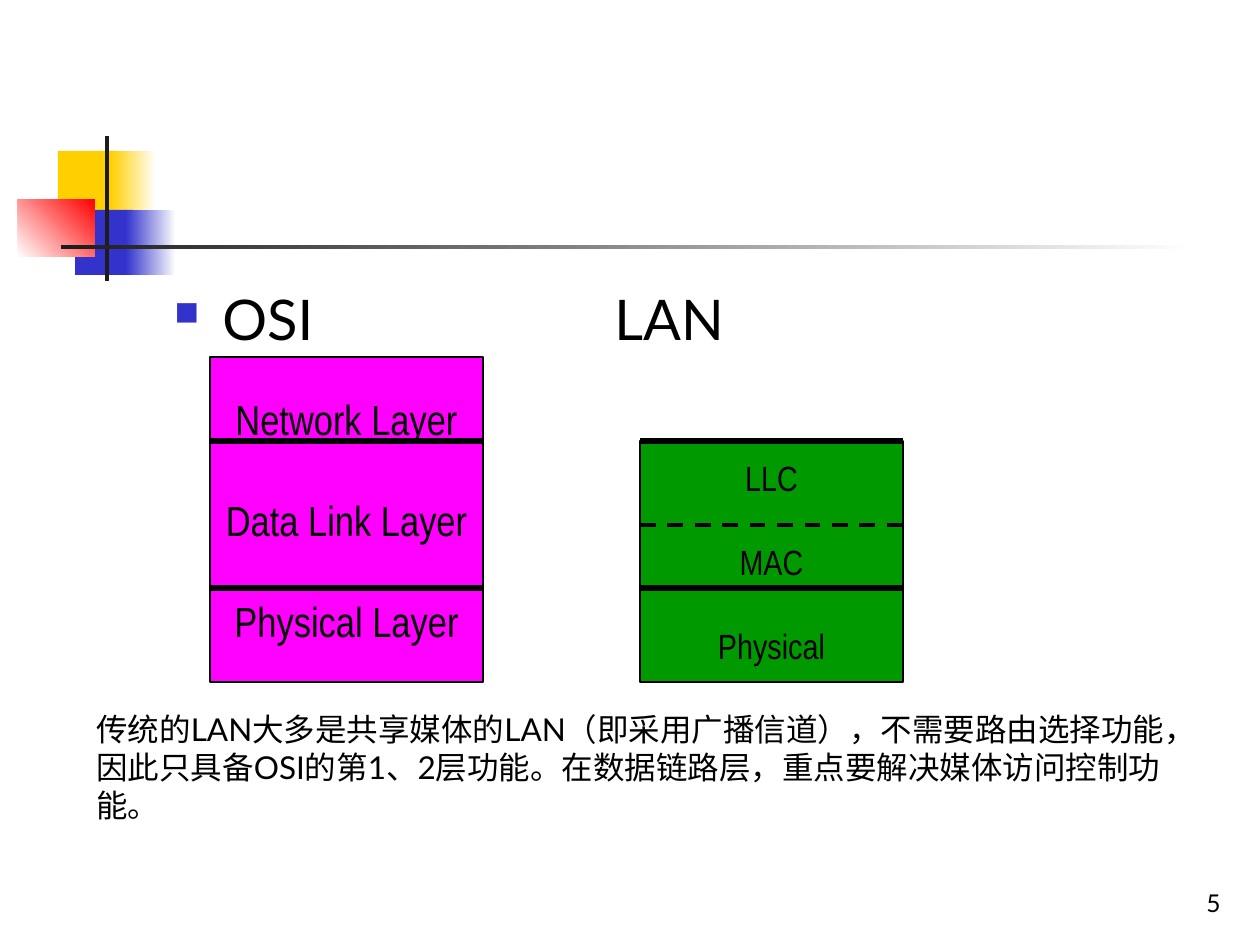
from dataclasses import dataclass

from lxml.etree import SubElement
from pptx import Presentation
from pptx.dml.color import RGBColor
from pptx.enum.dml import MSO_LINE_DASH_STYLE as Dash
from pptx.enum.shapes import MSO_CONNECTOR as Connector, MSO_SHAPE as Shape
from pptx.enum.text import MSO_ANCHOR as Anchor, PP_ALIGN as Align
from pptx.oxml.ns import qn
from pptx.util import Emu, Pt

EMU_PER_PX = 914400 / 126


@dataclass(frozen=True)
class Theme:
    black: str = "000000"
    white: str = "FFFFFF"
    dark: str = "1C1C1C"
    yellow: str = "FFCF01"
    blue: str = "3333CC"
    red: str = "FF0000"
    magenta: str = "FF00FF"
    green: str = "009900"
    body_font: str = "Lato"
    layer_font: str = "Arial Narrow"
    bullet_font: str = "Wingdings"
    heading_size: int = 32
    osi_size: int = 24
    lan_size: int = 20
    note_size: int = 18
    number_size: int = 14


THEME = Theme()


@dataclass(frozen=True)
class Box:
    left: int
    top: int
    width: int
    height: int


@dataclass(frozen=True)
class Block:
    """A plain rectangle; with end_color it fades from color at angle."""
    box: Box
    color: str
    end_color: str | None = None
    angle: int = 0


@dataclass(frozen=True)
class Divider:
    top: int
    weight: float = 3
    dash: Dash | None = None


@dataclass(frozen=True)
class Stack:
    box: Box
    color: str
    size: int
    layers: tuple[str, ...]
    dividers: tuple[Divider, ...]


@dataclass(frozen=True)
class Label:
    box: Box
    text: str
    size: int
    bulleted: bool = False
    align: Align = Align.LEFT
    anchor: Anchor = Anchor.TOP


ORNAMENT = (
    Block(Box(58, 151, 60, 66), THEME.yellow),
    Block(Box(111, 151, 45, 66), THEME.yellow, THEME.white),
    Block(Box(75, 210, 58, 65), THEME.blue),
    Block(Box(126, 210, 50, 65), THEME.blue, THEME.white),
    Block(Box(18, 199, 77, 58), THEME.white, THEME.red, 45),
    Block(Box(105, 136, 4, 145), THEME.dark),
    Block(Box(61, 245, 1134, 4), THEME.dark, THEME.white),
)

LABELS = (
    Label(Box(971, 861, 262, 63), "5", THEME.number_size, align=Align.RIGHT, anchor=Anchor.BOTTOM),
    Label(Box(162, 278, 400, 80), "OSI", THEME.heading_size, bulleted=True),
    Label(Box(602, 278, 400, 80), "LAN", THEME.heading_size),
    Label(
        Box(84, 704, 1134, 130),
        "传统的LAN大多是共享媒体的LAN（即采用广播信道），不需要路由选择功能，"
        "因此只具备OSI的第1、2层功能。在数据链路层，重点要解决媒体访问控制功能。",
        THEME.note_size,
    ),
)

LINK_TOP, LINK_BOTTOM = 441, 588
STACKS = (
    Stack(
        Box(210, 357, 273, 325), THEME.magenta, THEME.osi_size,
        ("Network Layer", "Data Link Layer", "Physical Layer"),
        (Divider(LINK_TOP), Divider(LINK_BOTTOM)),
    ),
    Stack(
        Box(640, LINK_TOP, 263, 241), THEME.green, THEME.lan_size,
        ("LLC", "MAC", "Physical"),
        (Divider(LINK_BOTTOM), Divider(LINK_TOP), Divider(525, 2.25, Dash.DASH)),
    ),
)


def px(length: int) -> Emu:
    return Emu(round(length * EMU_PER_PX))


def rgb(color: str) -> RGBColor:
    return RGBColor.from_string(color)


def corners(box: Box) -> tuple[Emu, ...]:
    return tuple(px(length) for length in (box.left, box.top, box.width, box.height))


def apply(target, **values) -> None:
    for name, value in values.items():
        setattr(target, name, value)


def add_span(para, text: str, font: str, size: int) -> None:
    span = para.add_run()
    span.text = text
    apply(span.font, name=font, size=Pt(size))
    span.font.color.rgb = rgb(THEME.black)


def add_bullet(para) -> None:
    """Give the paragraph a small blue square and a hanging indent."""
    properties = para._p.get_or_add_pPr()
    properties.set("marL", str(px(48)))
    properties.set("indent", str(-px(48)))
    color = SubElement(properties, qn("a:buClr"))
    SubElement(color, qn("a:srgbClr"), val=THEME.blue)
    SubElement(properties, qn("a:buSzPct"), val="60000")
    SubElement(properties, qn("a:buFont"), typeface=THEME.bullet_font, charset="2")
    SubElement(properties, qn("a:buChar"), char="n")


def draw_block(page, block: Block):
    shape = page.shapes.add_shape(Shape.RECTANGLE, *corners(block.box))
    shape.shadow.inherit = False
    shape.line.fill.background()
    if block.end_color is None:
        shape.fill.solid()
        shape.fill.fore_color.rgb = rgb(block.color)
    else:
        shape.fill.gradient()
        shape.fill.gradient_angle = block.angle
        for stop, color in zip(shape.fill.gradient_stops, (block.color, block.end_color)):
            stop.color.rgb = rgb(color)
    return shape


def draw_label(page, label: Label) -> None:
    frame = page.shapes.add_textbox(*corners(label.box)).text_frame
    apply(frame, word_wrap=True, vertical_anchor=label.anchor)
    para = frame.paragraphs[0]
    para.alignment = label.align
    # Keep line-end punctuation inside the box.
    para._p.get_or_add_pPr().set("hangingPunct", "0")
    if label.bulleted:
        add_bullet(para)
    add_span(para, label.text, THEME.body_font, label.size)


def draw_divider(page, box: Box, divider: Divider) -> None:
    top = px(divider.top)
    line = page.shapes.add_connector(
        Connector.STRAIGHT, px(box.left), top, px(box.left + box.width), top
    )
    SubElement(line._element.spPr, qn("a:effectLst"))
    line.line.color.rgb = rgb(THEME.black)
    apply(line.line, width=Pt(divider.weight), dash_style=divider.dash)


def draw_stack(page, stack: Stack) -> None:
    shape = draw_block(page, Block(stack.box, stack.color))
    shape.line.color.rgb = rgb(THEME.black)
    shape.line.width = Pt(0.75)
    frame = shape.text_frame
    apply(frame, word_wrap=False, vertical_anchor=Anchor.MIDDLE)
    for index, layer in enumerate(stack.layers):
        para = frame.add_paragraph() if index else frame.paragraphs[0]
        para.alignment = Align.CENTER
        if index:
            para.space_before = Pt(stack.size * 1.2)
        add_span(para, layer, THEME.layer_font, stack.size)
    for divider in stack.dividers:
        draw_divider(page, stack.box, divider)


def main() -> None:
    deck = Presentation()
    apply(deck, slide_width=px(1260), slide_height=px(945))
    page = deck.slides.add_slide(deck.slide_layouts[6])
    for block in ORNAMENT:
        draw_block(page, block)
    for label in LABELS:
        draw_label(page, label)
    for stack in STACKS:
        draw_stack(page, stack)
    deck.save("out.pptx")


if __name__ == "__main__":
    main()
